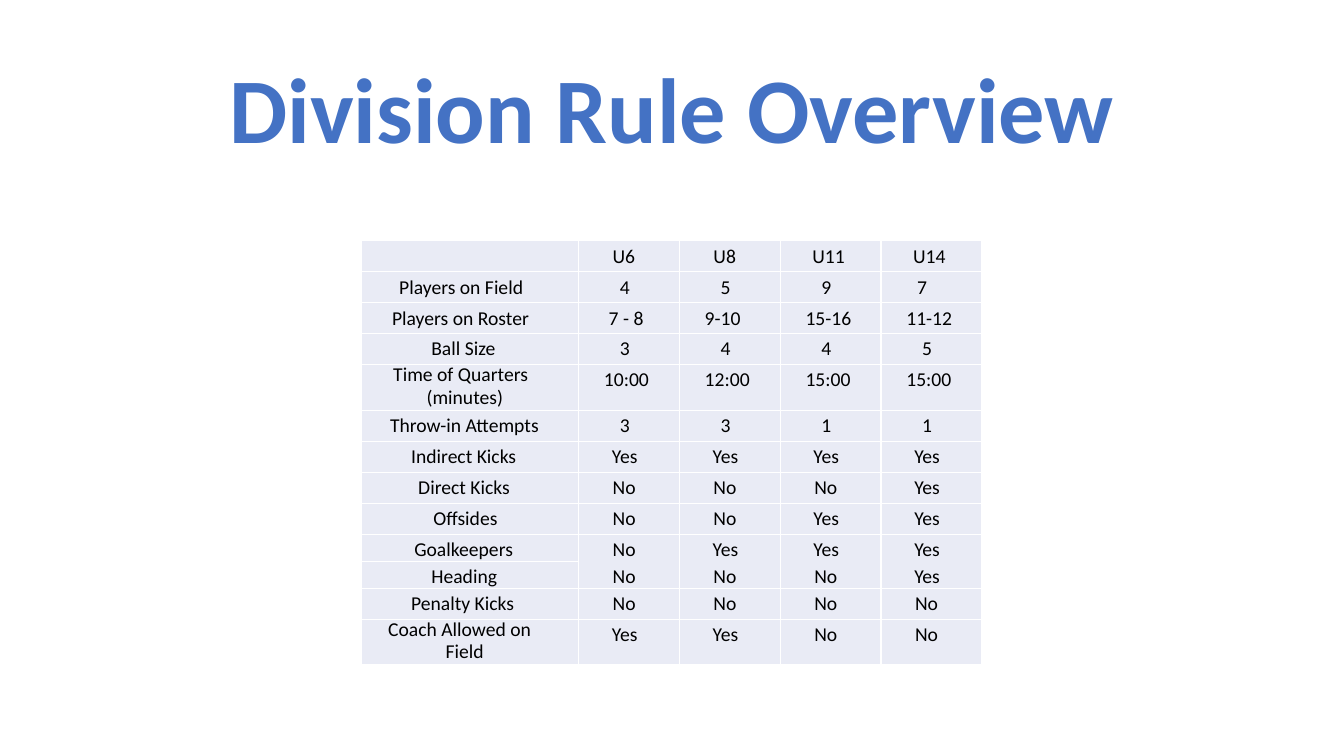
from lxml import etree
from pptx import Presentation
from pptx.dml.color import RGBColor
from pptx.enum.text import MSO_ANCHOR, PP_ALIGN
from pptx.oxml.ns import qn
from pptx.util import Cm, Pt

MIDDLE, CENTER = MSO_ANCHOR.MIDDLE, PP_ALIGN.CENTER
COLORS = {"title": "4472C4", "text": "000000", "cell": "E9EBF5", "line": "FFFFFF"}

TITLE = {"name": "Calibri", "size": Pt(66), "bold": True}
BODY = {"name": "Calibri", "size": Pt(14), "bold": False}
FLUSH = {"margin_left": 0, "margin_right": 0, "margin_top": 0, "margin_bottom": 0}
ONE = {"line_spacing": 1.15, "space_before": Pt(2.6)}
LOW = {"line_spacing": 1.15, "space_before": Pt(10.6)}
PAIR = {"line_spacing": Pt(16), "space_before": Pt(0)}

ROW, TALL = 0.78, 1.15
WIDTHS = [5.46] + [2.54] * 4
# Row height, label lines with their indents, values for U6 to U14
RULES = [
    (ROW, [], ["U6", "U8", "U11", "U14"]),
    (ROW, [("Players on Field", 0.94)], ["4", "5", "9", "7"]),
    (ROW, [("Players on Roster", 0.76)], ["7 - 8", "9-10", "15-16", "11-12"]),
    (ROW, [("Ball Size", 1.75)], ["3", "4", "4", "5"]),
    (TALL, [("Time of Quarters", 0.79), ("(minutes)", 1.63)],
     ["10:00", "12:00", "15:00", "15:00"]),
    (ROW, [("Throw-in Attempts", 0.71)], ["3", "3", "1", "1"]),
    (ROW, [("Indirect Kicks", 1.24)], ["Yes"] * 4),
    (ROW, [("Direct Kicks", 1.42)], ["No", "No", "No", "Yes"]),
    (ROW, [("Offsides", 1.8)], ["No", "No", "Yes", "Yes"]),
    (0.58, [("Goalkeepers", 1.32)], ["No", "Yes", "Yes", "Yes"]),
    (0, [], ["No", "No", "No", "Yes"]),
    (0.38, [("Heading", 1.75)], []),
    (ROW, [("Penalty Kicks", 1.24)], ["No"] * 4),
    (TALL, [("Coach Allowed on", 0.66), ("Field", 2.11)], ["Yes", "Yes", "No", "No"]),
]
KEEPER, HEADING = 9, 10
INDENTS = {"U6": 0.86, "U8": 0.86, "U11": 0.81, "U14": 0.81, "7": 0.91,
           "7 - 8": 0.76, "Yes": 0.84, "No": 0.86}


def put(item, values):
    for key, value in values.items():
        setattr(item, key, value)


def indent(text):
    """Left indent of a value, in centimetres."""
    return INDENTS.get(text, 1.04 if len(text) == 1 else 0.64)


def write(para, text, font, color):
    run = para.add_run()
    run.text = text
    put(run.font, font)
    run.font.color.rgb = RGBColor.from_string(COLORS[color])


def add_title(slide, text):
    box = slide.shapes.add_textbox(Cm(2.33), Cm(1.01), Cm(29.21), Cm(3.68))
    put(box.text_frame, {"word_wrap": True, "vertical_anchor": MIDDLE})
    para = box.text_frame.paragraphs[0]
    put(para, {"alignment": CENTER, "line_spacing": 0.9})
    write(para, text, TITLE, "title")


def style(cell):
    """Flush margins, white borders and a pale fill."""
    put(cell, FLUSH)
    props = cell._tc.get_or_add_tcPr()
    for side in ("lnL", "lnR", "lnT", "lnB"):
        line = etree.SubElement(props, qn("a:" + side), w=str(Pt(1)))
        fill = etree.SubElement(line, qn("a:solidFill"))
        etree.SubElement(fill, qn("a:srgbClr"), val=COLORS["line"])
    cell.fill.solid()
    cell.fill.fore_color.rgb = RGBColor.from_string(COLORS["cell"])


def fill_cell(cell, lines, form):
    frame = cell.text_frame
    for num, (text, left) in enumerate(lines):
        para = frame.add_paragraph() if num else frame.paragraphs[0]
        put(para, form)
        props = para._p.get_or_add_pPr()
        props.set("marL", str(Cm(left)))
        props.set("indent", "0")
        write(para, text, BODY, "text")


def add_rules(slide):
    high = sum(rule[0] for rule in RULES)
    table = slide.shapes.add_table(len(RULES), len(WIDTHS), Cm(9.12), Cm(6.07),
                                   Cm(sum(WIDTHS)), Cm(high)).table
    put(table, {"first_row": False, "horz_banding": False})
    for col, width in zip(table.columns, WIDTHS):
        col.width = Cm(width)
    for cell in table.iter_cells():
        style(cell)
    for col in range(len(WIDTHS)):
        top = HEADING if col else KEEPER
        table.cell(top, col).merge(table.cell(top + 1, col))
    for row, (height, label, values) in enumerate(RULES):
        table.rows[row].height = Cm(height)
        pair = len(label) > 1
        fill_cell(table.cell(row, 0), label, PAIR if pair else ONE)
        for col, text in enumerate(values, 1):
            fill_cell(table.cell(row, col), [(text, indent(text))], LOW if pair else ONE)


def main():
    deck = Presentation()
    put(deck, {"slide_width": Cm(33.87), "slide_height": Cm(19.05)})
    slide = deck.slides.add_slide(deck.slide_layouts[6])
    add_title(slide, "Division Rule Overview")
    add_rules(slide)
    deck.save("out.pptx")


if __name__ == "__main__":
    main()
